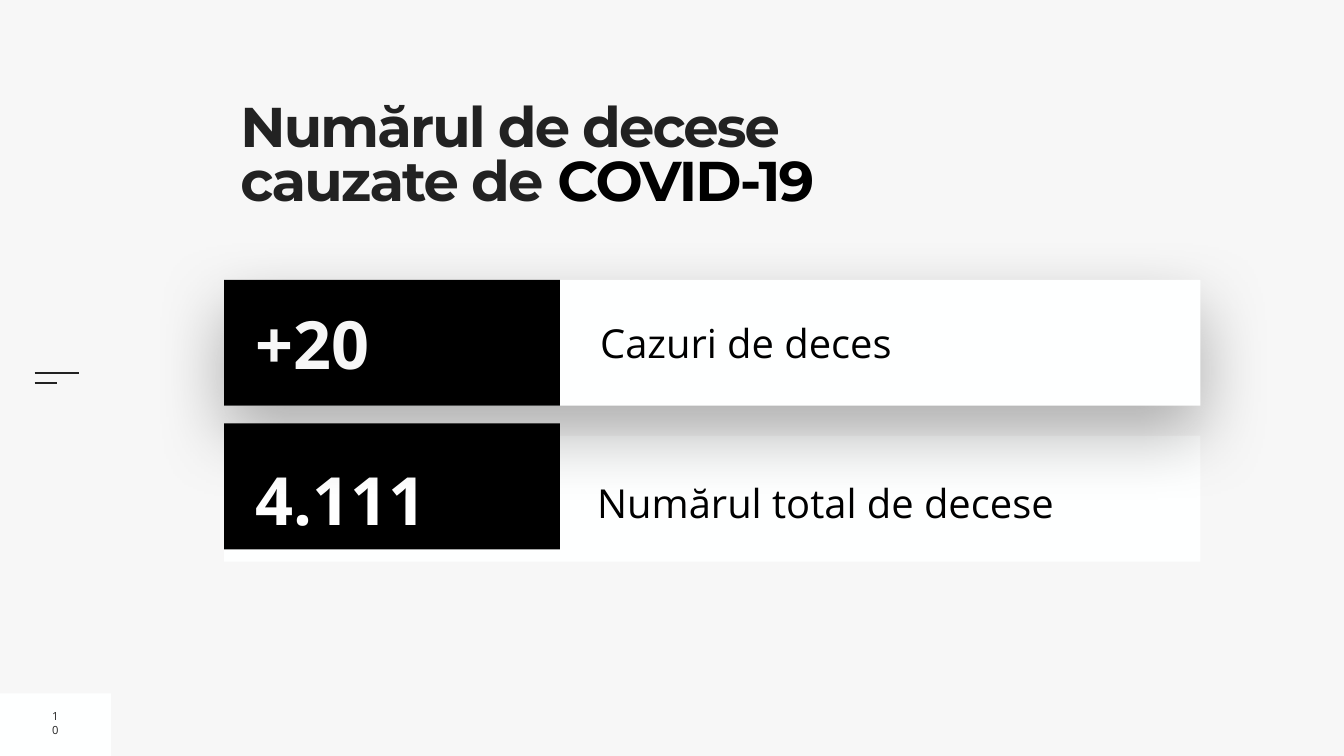
from lxml import etree
from pptx import Presentation
from pptx.dml.color import RGBColor
from pptx.enum.shapes import MSO_CONNECTOR, MSO_SHAPE
from pptx.enum.text import MSO_ANCHOR, PP_ALIGN
from pptx.oxml.ns import qn
from pptx.util import Cm, Pt

RECTANGLE = MSO_SHAPE.RECTANGLE
STRAIGHT = MSO_CONNECTOR.STRAIGHT
TOP, MIDDLE = MSO_ANCHOR.TOP, MSO_ANCHOR.MIDDLE
CENTER = PP_ALIGN.CENTER

BACKGROUND = RGBColor(0xF7, 0xF7, 0xF7)
PANEL = RGBColor(0xFE, 0xFF, 0xFF)
WHITE = RGBColor(0xFF, 0xFF, 0xFF)
BLACK = RGBColor(0x00, 0x00, 0x00)
DARK = RGBColor(0x22, 0x22, 0x22)

HEADING_FONT, BODY_FONT = "Montserrat", "Open Sans"
ROW_LEFT, ROW_WIDTH, ROW_HEIGHT = 11.3, 49.2, 6.35
NUMBER_WIDTH = 16.92


def add_panel(slide, left, top, width, height, color):
    shape = slide.shapes.add_shape(RECTANGLE, Cm(left), Cm(top), Cm(width), Cm(height))
    shape.shadow.inherit = False
    shape.fill.solid()
    shape.fill.fore_color.rgb = color
    shape.line.fill.background()
    return shape


def add_text(slide, left, top, width, height, text, size, color,
             font=BODY_FONT, bold=False, anchor=MIDDLE, inset=0.25):
    box = slide.shapes.add_textbox(Cm(left), Cm(top), Cm(width), Cm(height))
    frame = box.text_frame
    frame.word_wrap = True
    frame.vertical_anchor = anchor
    frame.margin_left = frame.margin_right = Cm(inset)
    frame.margin_top = frame.margin_bottom = Cm(inset)
    paragraph = frame.paragraphs[0]
    paragraph.add_run().text = text
    paragraph.font.name = font
    paragraph.font.size = Pt(size)
    paragraph.font.bold = bold
    paragraph.font.color.rgb = color
    return paragraph


def add_soft_shadow(shape):
    effects = shape._element.spPr.find(qn("a:effectLst"))
    shadow = etree.SubElement(effects, qn("a:outerShdw"), blurRad=str(Pt(100)),
                              dist=str(Pt(40)), dir="5400000", rotWithShape="0")
    color = etree.SubElement(shadow, qn("a:srgbClr"), val=str(BLACK))
    etree.SubElement(color, qn("a:alpha"), val="30000")


def add_menu_mark(slide, left, top):
    for offset, width in ((0, 2.24), (0.46, 1.12)):
        line = slide.shapes.add_connector(STRAIGHT, Cm(left), Cm(top + offset),
                                          Cm(left + width), Cm(top + offset))
        line.line.color.rgb = DARK
        line.line.width = Pt(3)
        etree.SubElement(line._element.spPr, qn("a:effectLst"))


def add_page_number(slide, left, top, width, height):
    add_panel(slide, left, top, width, height, PANEL)
    paragraph = add_text(slide, left + 2.36, top + 0.84, 0.86, 1.3, "10", 16, DARK)
    paragraph.alignment = CENTER


def add_title(slide, left, top, width, height):
    paragraph = add_text(slide, left, top, width, height, "Numărul de decese cauzate de ",
                         80, DARK, HEADING_FONT, True, TOP, 0)
    paragraph.line_spacing = 0.8
    disease = paragraph.add_run()
    disease.text = "COVID-19"
    disease.font.color.rgb = BLACK
    for run in paragraph.runs:
        run.font._element.set("spc", "-270")


def add_row(slide, left, top, number, number_color, number_offset=0.89, panel_offset=0.0):
    """Black number block at left, top on a white panel; returns the panel."""
    panel = add_panel(slide, left, top + panel_offset, ROW_WIDTH, ROW_HEIGHT, PANEL)
    add_panel(slide, left, top, NUMBER_WIDTH, ROW_HEIGHT, BLACK)
    add_text(slide, left + 1.35, top + number_offset, 15.32, 4.57,
             number, 95, number_color, bold=True)
    return panel


def main():
    presentation = Presentation()
    presentation.slide_width, presentation.slide_height = Cm(67.74), Cm(38.1)
    slide = presentation.slides.add_slide(presentation.slide_layouts[6])
    slide.background.fill.solid()
    slide.background.fill.fore_color.rgb = BACKGROUND

    # Frame of the page
    add_page_number(slide, 0, 34.95, 5.59, 3.15)
    add_menu_mark(slide, 1.75, 18.82)
    add_title(slide, 12.12, 5.26, 33.05, 6.93)

    # Total deaths
    add_row(slide, ROW_LEFT, 21.34, "4.111", WHITE, 1.5, 0.61)
    total = add_text(slide, 30.1, 23.57, 29.41, 2.84, "Numărul total de decese",
                     57, BLACK, inset=0)
    total.line_spacing = 1.3
    total.space_before = Pt(20)

    # New deaths, raised above the total
    panel = add_row(slide, ROW_LEFT, 14.1, "+20", BACKGROUND)
    add_soft_shadow(panel)
    add_text(slide, 30, 15.8, 29.87, 2.95, "Cazuri de deces", 57, BLACK)

    presentation.save("out.pptx")


if __name__ == "__main__":
    main()
